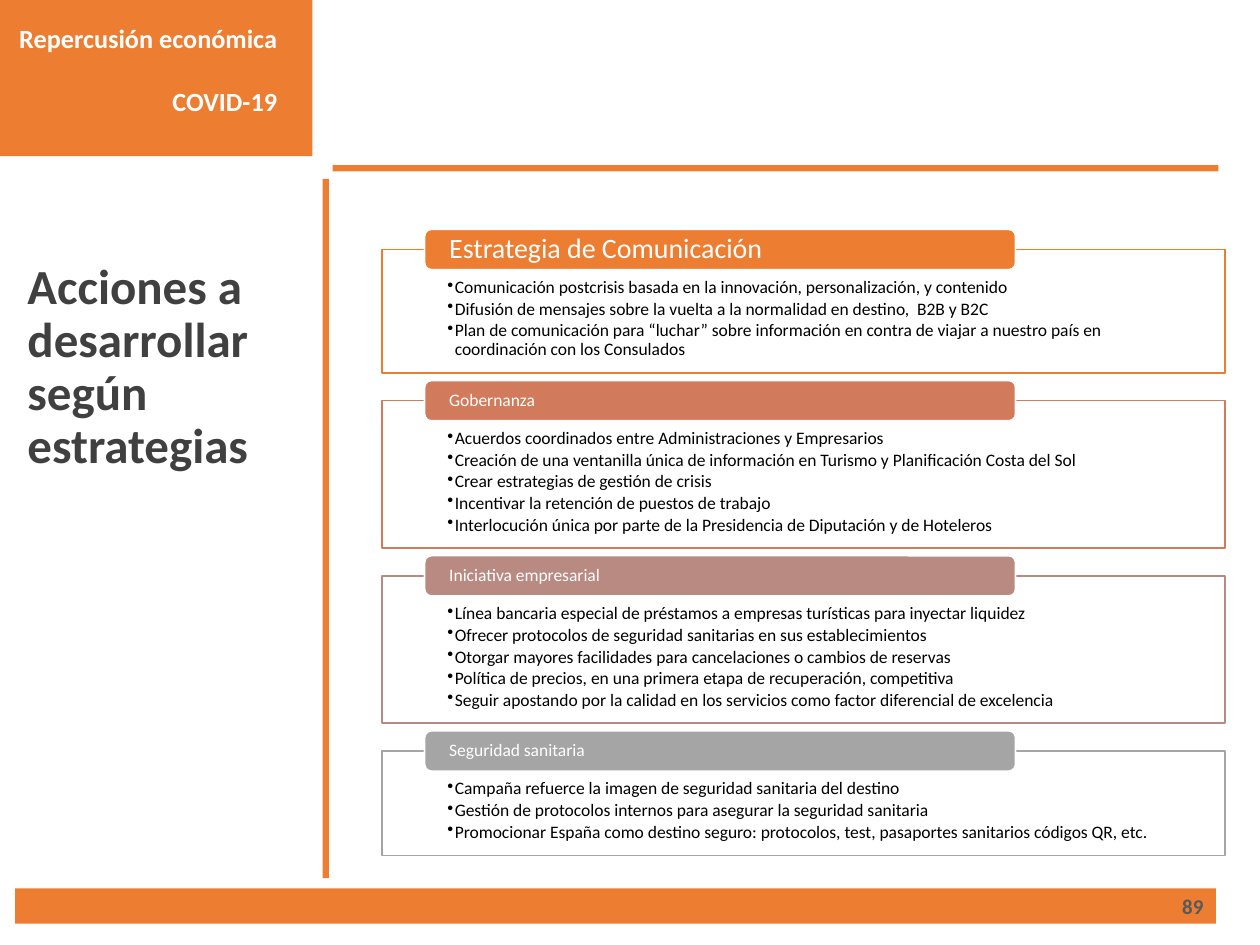
"""Build the slide on actions by strategy after COVID-19."""
from lxml.etree import SubElement
from pptx import Presentation
from pptx.dml.color import RGBColor
from pptx.enum.shapes import MSO_SHAPE as Preset
from pptx.enum.text import MSO_ANCHOR as Anchor, PP_ALIGN as Align
from pptx.oxml.ns import qn
from pptx.util import Inches, Pt

ORANGE = RGBColor(0xED, 0x7D, 0x31)
TERRACOTTA = RGBColor(0xD1, 0x7B, 0x5C)
ROSE = RGBColor(0xB9, 0x8A, 0x82)
GRAY = RGBColor(0xA5, 0xA5, 0xA5)
DARK = RGBColor(0x40, 0x40, 0x40)
NUMBER_GRAY = RGBColor(0x59, 0x59, 0x59)
WHITE = RGBColor(0xFF, 0xFF, 0xFF)
BLACK = RGBColor(0x00, 0x00, 0x00)

BOX_TOP, BOX_GAP, LABEL_RISE = 1.98, 0.22, 0.16

STRATEGIES = [
    ("Estrategia de Comunicación", 16, ORANGE, 0.98, [
        "Comunicación postcrisis basada en la innovación, personalización, y contenido",
        "Difusión de mensajes sobre la vuelta a la normalidad en destino,  B2B y B2C",
        "Plan de comunicación para “luchar” sobre información en contra de viajar "
        "a nuestro país en  coordinación con los Consulados",
    ]),
    ("Gobernanza", 10, TERRACOTTA, 1.17, [
        "Acuerdos coordinados entre Administraciones y Empresarios",
        "Creación de una ventanilla única de información en Turismo y Planificación Costa del Sol",
        "Crear estrategias de gestión de crisis",
        "Incentivar la retención de puestos de trabajo",
        "Interlocución única por parte de la Presidencia de Diputación y de Hoteleros",
    ]),
    ("Iniciativa empresarial", 10, ROSE, 1.17, [
        "Línea bancaria especial de préstamos a empresas turísticas para inyectar liquidez",
        "Ofrecer protocolos de seguridad sanitarias en sus establecimientos",
        "Otorgar mayores facilidades para cancelaciones o cambios de reservas",
        "Política de precios, en una primera etapa de recuperación, competitiva",
        "Seguir apostando por la calidad en los servicios como factor diferencial de excelencia",
    ]),
    ("Seguridad sanitaria", 10, GRAY, 0.83, [
        "Campaña refuerce la imagen de seguridad sanitaria del destino",
        "Gestión de protocolos internos para asegurar la seguridad sanitaria",
        "Promocionar España como destino seguro: protocolos, test, pasaportes "
        "sanitarios códigos QR, etc.",
    ]),
]


class SlideBuilder:
    """Hold the text style and the current slide."""

    font = "Calibri"

    def __init__(self, slide):
        self.slide = slide

    def shape(self, preset, left, top, width, height, fill, line=None):
        """Add a filled preset shape."""
        shape = self.slide.shapes.add_shape(
            preset, Inches(left), Inches(top), Inches(width), Inches(height))
        shape.shadow.inherit = False
        shape.fill.solid()
        shape.fill.fore_color.rgb = fill
        if line is None:
            shape.line.fill.background()
        else:
            shape.line.color.rgb = line
            shape.line.width = Pt(1)
        return shape

    def bar(self, left, top, width, height):
        """Add a plain orange rectangle."""
        return self.shape(Preset.RECTANGLE, left, top, width, height, ORANGE)

    def text(self, shape, lines, size, color, insets=(0.1, 0.05, 0.1, 0.05), bold=False,
             align=Align.LEFT, anchor=Anchor.TOP, spacing=1.0, before=0, after=0):
        """Write one paragraph per line and return the paragraphs."""
        frame = shape.text_frame
        frame.word_wrap = True
        frame.vertical_anchor = anchor
        (frame.margin_left, frame.margin_top,
         frame.margin_right, frame.margin_bottom) = map(Inches, insets)
        for index, line in enumerate(lines):
            paragraph = frame.add_paragraph() if index else frame.paragraphs[0]
            paragraph.alignment = align
            paragraph.line_spacing = spacing
            paragraph.space_before = Pt(before if index else 0)
            paragraph.space_after = Pt(after)
            run = paragraph.add_run()
            run.text = line
            run.font.name = self.font
            run.font.size = Pt(size)
            run.font.bold = bold
            run.font.color.rgb = color
        return frame.paragraphs

    def title(self, words):
        """Add the heading of the left column."""
        box = self.slide.shapes.add_textbox(
            Inches(0.12), Inches(1.42), Inches(2.47), Inches(5.49))
        self.text(box, [words], 28, DARK, (0.1, 0.66, 0.1, 0.05), bold=True, spacing=0.9)

    def strategy(self, top, name, size, color, height, actions):
        """Add an outlined list of actions with its label."""
        box = self.shape(Preset.RECTANGLE, 3.03, top, 6.69, height, WHITE, color)
        fill_color = box.fill._xPr.find(qn("a:solidFill"))[0]
        SubElement(fill_color, qn("a:alpha"), val="90000")
        paragraphs = self.text(box, actions, 10, BLACK, (0.52, 0.23, 0.52, 0.08),
                               spacing=0.9, after=1.5)
        for paragraph in paragraphs:
            properties = paragraph._p.get_or_add_pPr()
            properties.set("marL", str(Inches(0.06)))
            properties.set("indent", str(Inches(-0.06)))
            SubElement(properties, qn("a:buChar"), char="•")
        label = self.shape(Preset.ROUNDED_RECTANGLE, 3.37, top - LABEL_RISE,
                           4.69, 0.32, color, WHITE)
        self.text(label, [name], size, WHITE, (0.18, 0, 0.18, 0),
                  anchor=Anchor.MIDDLE, spacing=0.9)


def main():
    """Build and save the presentation."""
    presentation = Presentation()
    presentation.slide_width = Inches(10)
    presentation.slide_height = Inches(7.5)
    builder = SlideBuilder(presentation.slides.add_slide(presentation.slide_layouts[6]))

    footer = builder.bar(0.12, 7.05, 9.53, 0.28)
    builder.text(footer, ["89"], 12, NUMBER_GRAY, bold=True,
                 align=Align.RIGHT, anchor=Anchor.MIDDLE)
    header = builder.bar(0, -0.02, 2.48, 1.26)
    builder.text(header, ["Repercusión económica", "COVID-19"], 15, WHITE,
                 (0.1, 0.2, 0.28, 0.05), bold=True, align=Align.RIGHT, before=18)
    builder.bar(2.64, 1.31, 7.03, 0.05)
    builder.bar(2.56, 1.42, 0.05, 5.55)

    top = BOX_TOP
    for name, size, color, height, actions in STRATEGIES:
        builder.strategy(top, name, size, color, height, actions)
        top += height + BOX_GAP
    builder.title("Acciones a desarrollar según estrategias")

    presentation.save("out.pptx")


if __name__ == "__main__":
    main()
